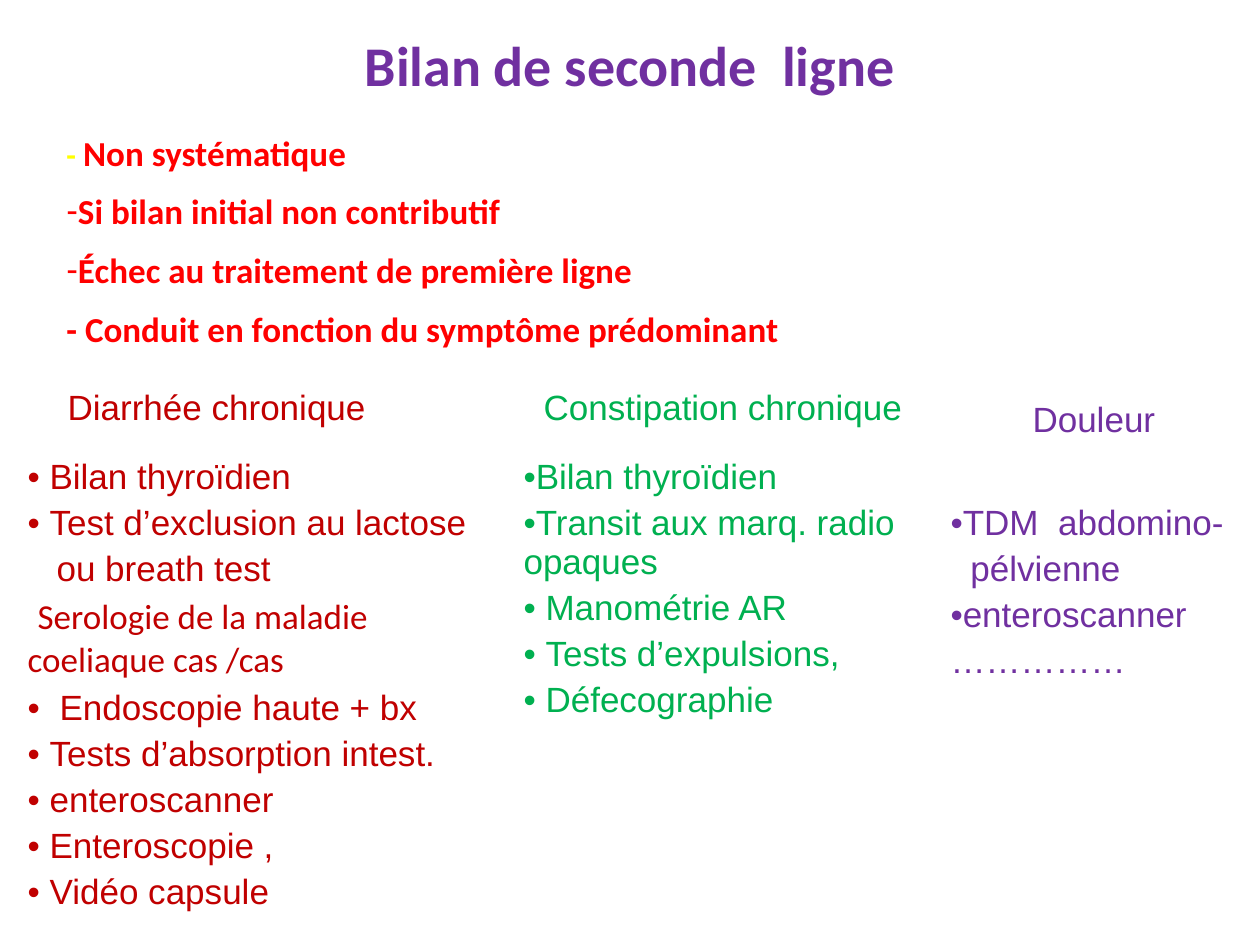
from dataclasses import dataclass
from lxml.etree import SubElement
from pptx import Presentation
from pptx.dml.color import RGBColor
from pptx.enum.text import MSO_ANCHOR as Anchor, PP_ALIGN as Align
from pptx.oxml.ns import qn
from pptx.util import Pt

PX = 914400 // 126


@dataclass(frozen=True)
class Theme:
    heading_font: str = "Calibri"
    body_font: str = "Arial"
    purple: str = "7030A0"
    red: str = "FF0000"
    dark_red: str = "C00000"
    green: str = "00B050"
    yellow: str = "FFFF00"
    title_size: int = 32
    body_size: int = 20
    dash_size: int = 18
    point_gap: float = 9.5
    item_gap: int = 4


theme = Theme()


def format_run(run, font, size, color, bold=False):
    run.font.name = font
    run.font.size = Pt(size)
    run.font.bold = bold
    run.font.color.rgb = RGBColor.from_string(color)


def set_indent(paragraph, left, first, bullet=None):
    properties = paragraph._p.get_or_add_pPr()
    properties.set("marL", str(left * PX))
    properties.set("indent", str(first * PX))
    if bullet:
        SubElement(properties, qn("a:buFont"), typeface=theme.body_font)
        SubElement(properties, qn("a:buChar"), char=bullet)
    else:
        SubElement(properties, qn("a:buNone"))


presentation = Presentation()
presentation.slide_width = 1260 * PX
presentation.slide_height = 945 * PX
slide = presentation.slides.add_slide(presentation.slide_layouts[6])

title = slide.shapes.add_textbox(63 * PX, -14 * PX, 1134 * PX, 157 * PX)
title.text_frame.word_wrap = True
title.text_frame.vertical_anchor = Anchor.MIDDLE
title.text_frame.text = "Bilan de seconde  ligne"
paragraph = title.text_frame.paragraphs[0]
paragraph.alignment = Align.CENTER
format_run(paragraph.runs[0], theme.heading_font, theme.title_size, theme.purple, True)

columns = [
    (496, theme.dark_red, "Diarrhée chronique", 40, 6, 6, [
        ("Bilan thyroïdien", 22, -22, "•"),
        ("Test d’exclusion au lactose", 22, -22, "•"),
        ("ou breath test", 29, 0, None),
        ("Serologie de la maladie coeliaque cas /cas", 0, 10, None),
        ("Endoscopie haute + bx", 32, -32, "•"),
        ("Tests d’absorption intest.", 22, -22, "•"),
        ("enteroscanner", 22, -22, "•"),
        ("Enteroscopie ,", 22, -22, "•"),
        ("Vidéo capsule", 22, -22, "•"),
    ]),
    (427, theme.green, "Constipation chronique", 20, 6, 6, [
        ("Bilan thyroïdien", 0, 0, "•"),
        ("Transit aux marq. radio opaques", 0, 0, "•"),
        ("Manométrie AR", 22, -22, "•"),
        ("Tests d’expulsions,", 22, -22, "•"),
        ("Défecographie", 22, -22, "•"),
    ]),
    (303, theme.purple, "Douleur", 82, 18, 52, [
        ("TDM  abdomino-", 0, 0, "•"),
        ("pélvienne", 20, 0, None),
        ("enteroscanner", 0, 0, "•"),
        ("……………", 0, 0, None),
    ]),
]
row_heights = [69, 455]
table_width = sum(column[0] for column in columns)
table = slide.shapes.add_table(
    2, len(columns), 15 * PX, 383 * PX, table_width * PX, sum(row_heights) * PX
).table
table.first_row = False
table.horz_banding = False
for row, height in zip(table.rows, row_heights):
    row.height = height * PX

for index, (width, color, heading, indent, heading_top, list_top, items) in enumerate(columns):
    table.columns[index].width = width * PX
    contents = [(heading_top, [(heading, indent, 0, None)]), (list_top, items)]
    for row_index, (margin_top, lines) in enumerate(contents):
        cell = table.cell(row_index, index)
        cell.fill.background()
        cell.margin_top = margin_top * PX
        cell.text_frame.text = "\n".join(line[0] for line in lines)
        for number, paragraph in enumerate(cell.text_frame.paragraphs):
            text, left, first, bullet = lines[number]
            if number:
                paragraph.space_before = Pt(theme.item_gap)
            set_indent(paragraph, left, first, bullet)
            font = theme.heading_font if text.startswith("Serologie") else theme.body_font
            format_run(paragraph.runs[0], font, theme.body_size, color)

points = [
    ("- ", None),
    ("Si bilan initial non contributif", "-"),
    ("Échec au traitement de première ligne", "-"),
    ("- Conduit en fonction du symptôme prédominant", None),
]
criteria = slide.shapes.add_textbox(54 * PX, 125 * PX, 1160 * PX, 243 * PX)
criteria.text_frame.word_wrap = True
criteria.text_frame.text = "\n".join(text for text, bullet in points)
for number, paragraph in enumerate(criteria.text_frame.paragraphs):
    if number:
        paragraph.space_before = Pt(theme.point_gap)
    set_indent(paragraph, 0, 0, points[number][1])
    format_run(paragraph.runs[0], theme.heading_font, theme.body_size, theme.red, True)

opening = criteria.text_frame.paragraphs[0]
format_run(opening.runs[0], theme.heading_font, theme.dash_size, theme.yellow, True)
run = opening.add_run()
run.text = "Non systématique"
format_run(run, theme.heading_font, theme.body_size, theme.red, True)

presentation.save("out.pptx")
